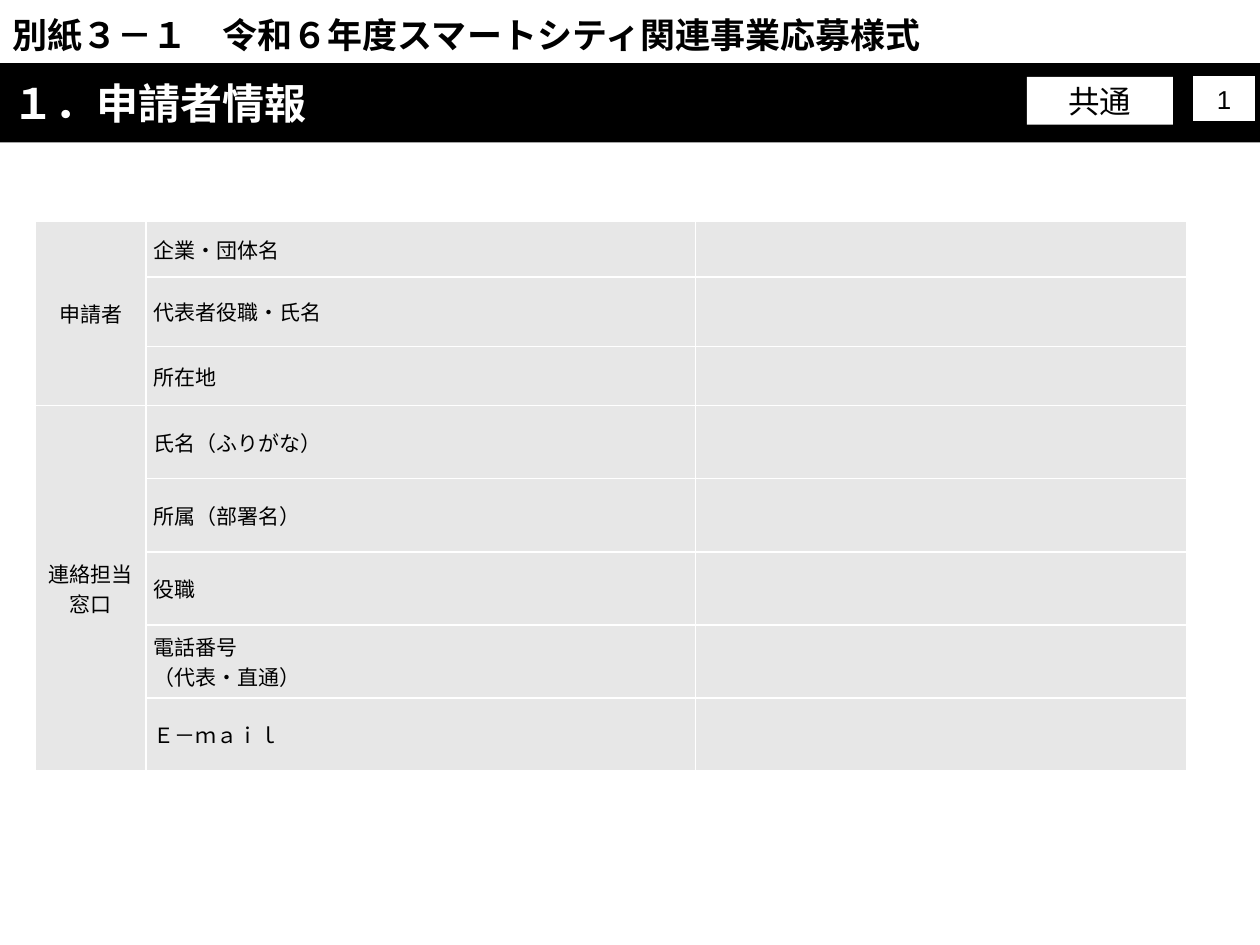
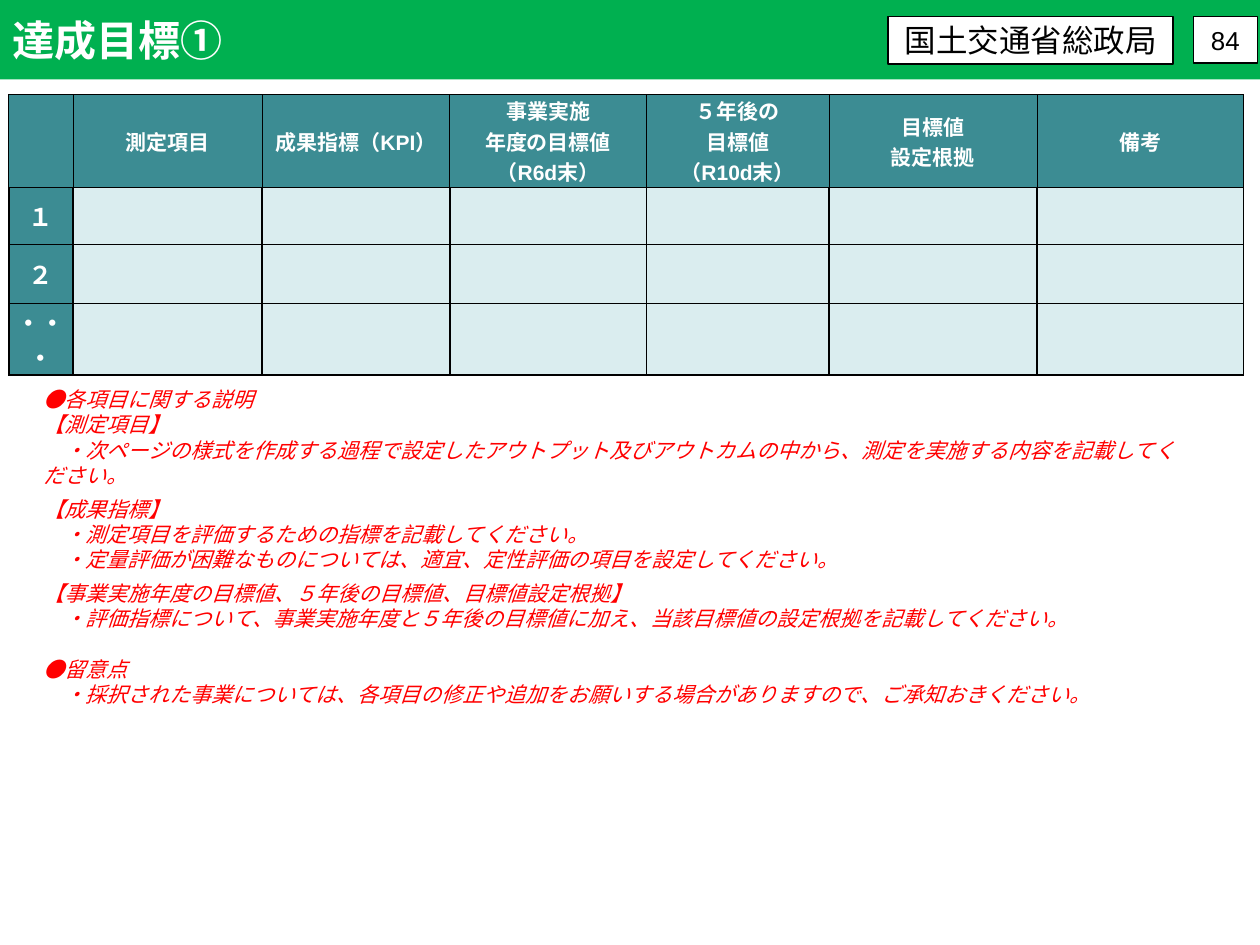
from dataclasses import dataclass

from lxml.etree import SubElement
from pptx import Presentation
from pptx.dml.color import RGBColor
from pptx.enum.shapes import MSO_SHAPE as Preset
from pptx.enum.text import MSO_ANCHOR as Anchor, PP_ALIGN as Align
from pptx.oxml.ns import qn
from pptx.util import Inches, Pt

COLORS = {
    "black": "000000", "white": "FFFFFF", "green": "00B050", "red": "FF0000",
    "grey": "E7E7E7", "teal": "3C8C93", "pale": "DAEDEF",
}
LATIN = "Arial"
JAPANESE = "Noto Sans CJK JP"
SIDES = ("L", "R", "T", "B")


@dataclass(frozen=True)
class Style:
    size: float
    color: str = "black"
    face: str = LATIN
    bold: bool = False
    italic: bool = False
    align: Align = Align.CENTER


@dataclass(frozen=True)
class Badge:
    text: str
    left: float
    top: float
    width: float
    height: float
    size: float
    border: float = 0


@dataclass(frozen=True)
class Note:
    text: str
    face: str = LATIN
    gap: float = 0


@dataclass(frozen=True)
class Grid:
    left: float
    top: float
    columns: tuple[float, ...]
    rows: tuple[float, ...]


TITLE = Style(24, "white", JAPANESE, bold=True, align=Align.LEFT)
FORM_HEADING = Style(20, bold=True, align=Align.LEFT)
GROUP = Style(12, face=JAPANESE)
ITEM = Style(12, face=JAPANESE, align=Align.JUSTIFY)
HEADER = Style(12, "white", bold=True)
HEADER_JAPANESE = Style(12, "white", JAPANESE, bold=True)
ROW_NUMBER = Style(14, "white", bold=True)

APPLICANT_GRID = Grid(0.28, 1.76, (0.88, 4.36, 3.9), (0.44, 0.55, 0.47) + (0.58,) * 5)
APPLICANT_GROUPS = {
    "申請者": ("企業・団体名", "代表者役職・氏名", "所在地"),
    "連絡担当窓口": ("氏名（ふりがな）", "所属（部署名）", "役職",
               "電話番号\n（代表・直通）", "Ｅ－ｍａｉｌ"),
}

GOAL_GRID = Grid(0.07, 0.75, (0.51, 1.5, 1.49, 1.56, 1.45, 1.65, 1.64), (0.74, 0.45, 0.47, 0.47))
GOAL_HEADERS = (
    "", "測定項目", "成果指標（KPI）", "事業実施\n年度の目標値\n（R6d末）",
    "５年後の\n目標値\n（R10d末）", "目標値\n設定根拠", "備考",
)
JAPANESE_HEADER_LINES = ("事業実施", "年度の目標値", "備考")
GOAL_ROWS = ("１", "２", "・・・")

NOTES = (
    Note("●各項目に関する説明"),
    Note("【測定項目】"),
    Note("　・次ページの様式を作成する過程で設定したアウトプット及びアウトカムの中から、"
         "測定を実施する内容を記載してください。"),
    Note("【成果指標】", gap=5),
    Note("　・測定項目を評価するための指標を記載してください。"),
    Note("　・定量評価が困難なものについては、適宜、定性評価の項目を設定してください。"),
    Note("【事業実施年度の目標値、５年後の目標値、目標値設定根拠】", JAPANESE, 5),
    Note("　・評価指標について、事業実施年度と５年後の目標値に加え、"
         "当該目標値の設定根拠を記載してください。", JAPANESE),
    Note("●留意点", JAPANESE, 14.4),
    Note("　・採択された事業については、各項目の修正や追加をお願いする場合がありますので、"
         "ご承知おきください。", JAPANESE),
)


def rgb(name: str) -> RGBColor:
    return RGBColor.from_string(COLORS[name])


def paint(target, color: str) -> None:
    target.fill.solid()
    target.fill.fore_color.rgb = rgb(color)


def place(shape, left: float, top: float, width: float, height: float) -> None:
    shape.left, shape.top = Inches(left), Inches(top)
    shape.width, shape.height = Inches(width), Inches(height)


def format_para(para, style: Style) -> None:
    para.alignment = style.align
    font = para.font
    font.size, font.name = Pt(style.size), style.face
    font.bold, font.italic = style.bold, style.italic
    font.color.rgb = rgb(style.color)
    defaults = para._p.pPr.find(qn("a:defRPr"))
    SubElement(defaults, qn("a:ea")).set("typeface", JAPANESE)


def write(frame, text: str, style: Style) -> None:
    frame.text = text
    for para in frame.paragraphs:
        format_para(para, style)


def add_title(page, text: str, top: float, color: str) -> None:
    title = page.shapes.title
    place(title, 0, top, 10, 0.63)
    paint(title, color)
    title.text_frame.vertical_anchor = Anchor.MIDDLE
    write(title.text_frame, text, TITLE)


def add_text_box(page, left: float, top: float, width: float, height: float):
    box = page.shapes.add_textbox(Inches(left), Inches(top), Inches(width), Inches(height))
    box.text_frame.word_wrap = True
    return box.text_frame


def add_badge(page, badge: Badge) -> None:
    box = page.shapes.add_shape(Preset.RECTANGLE, 0, 0, 0, 0)
    place(box, badge.left, badge.top, badge.width, badge.height)
    box._element.remove(box._element.find(qn("p:style")))
    box.shadow.inherit = False
    paint(box, "white")
    if badge.border:
        box.line.color.rgb = rgb("black")
        box.line.width = Pt(badge.border)
    else:
        box.line.fill.background()
    box.text_frame.vertical_anchor = Anchor.MIDDLE
    write(box.text_frame, badge.text, Style(badge.size))


def add_grid(page, grid: Grid):
    frame = page.shapes.add_table(
        len(grid.rows), len(grid.columns), Inches(grid.left), Inches(grid.top),
        Inches(sum(grid.columns)), Inches(sum(grid.rows)))
    table = frame.table
    table.first_row = table.horz_banding = False
    properties = table._tbl.tblPr
    properties.remove(properties.find(qn("a:tableStyleId")))
    for column, width in zip(table.columns, grid.columns):
        column.width = Inches(width)
    for row, height in zip(table.rows, grid.rows):
        row.height = Inches(height)
    return table


def set_borders(cell, color: str, widths: tuple[float, ...]) -> None:
    properties = cell._tc.get_or_add_tcPr()
    for side, width in zip(SIDES, widths):
        line = SubElement(properties, qn(f"a:ln{side}"))
        line.set("w", str(Pt(width)))
        fill = SubElement(line, qn("a:solidFill"))
        SubElement(fill, qn("a:srgbClr")).set("val", COLORS[color])


def format_cell(cell, fill: str, border: str, margin: float,
                widths: tuple[float, ...] = (1, 1, 1, 1)) -> None:
    set_borders(cell, border, widths)
    paint(cell, fill)
    cell.vertical_anchor = Anchor.MIDDLE
    cell.margin_left = cell.margin_right = Inches(margin)
    cell.margin_top = cell.margin_bottom = 0


def set_vertical(cell) -> None:
    cell._tc.get_or_add_tcPr().set("vert", "eaVert")


def build_applicant_page(deck) -> None:
    page = deck.slides.add_slide(deck.slide_layouts[5])
    add_title(page, "１．申請者情報", 0.5, "black")
    heading = add_text_box(page, 0, 0.05, 7.83, 0.44)
    heading.vertical_anchor = Anchor.MIDDLE
    write(heading, "別紙３－１　令和６年度スマートシティ関連事業応募様式", FORM_HEADING)
    add_badge(page, Badge("共通", 8.15, 0.61, 1.16, 0.38, 18))
    add_badge(page, Badge("1", 9.46, 0.6, 0.51, 0.37, 14.8, 0.75))

    table = add_grid(page, APPLICANT_GRID)
    for cell in table.iter_cells():
        format_cell(cell, "grey", "white", 0.06)
    first = 0
    for group, items in APPLICANT_GROUPS.items():
        group_cell = table.cell(first, 0)
        group_cell.merge(table.cell(first + len(items) - 1, 0))
        set_vertical(group_cell)
        write(group_cell.text_frame, group, GROUP)
        for row, item in enumerate(items, first):
            write(table.cell(row, 1).text_frame, item, ITEM)
        first += len(items)


def add_goal_table(page) -> None:
    table = add_grid(page, GOAL_GRID)
    for column, header in enumerate(GOAL_HEADERS):
        cell = table.cell(0, column)
        format_cell(cell, "teal", "black", 0, (0.5, 0.5, 0.5, 1))
        cell.text_frame.text = header
        for para in cell.text_frame.paragraphs:
            format_para(para, HEADER_JAPANESE if para.text in JAPANESE_HEADER_LINES else HEADER)
    for row, label in enumerate(GOAL_ROWS, 1):
        for column in range(len(GOAL_HEADERS)):
            format_cell(table.cell(row, column), "pale" if column else "teal", "black", 0)
        write(table.cell(row, 0).text_frame, label, ROW_NUMBER)
    set_vertical(table.cell(len(GOAL_ROWS), 0))


def build_goal_page(deck) -> None:
    page = deck.slides.add_slide(deck.slide_layouts[5])
    add_title(page, "達成目標①", 0, "green")
    add_goal_table(page)
    add_badge(page, Badge("国土交通省総政局", 7.05, 0.13, 2.26, 0.38, 18, 1))
    add_badge(page, Badge("84", 9.47, 0.13, 0.51, 0.37, 14.8, 0.75))

    frame = add_text_box(page, 0.25, 3.02, 9.19, 2.46)
    frame.text = "\n".join(note.text for note in NOTES)
    for para, note in zip(frame.paragraphs, NOTES):
        format_para(para, Style(12, "red", note.face, italic=True, align=Align.LEFT))
        para.line_spacing = Pt(14.4)
        para.space_before = Pt(note.gap)


def main() -> None:
    deck = Presentation()
    deck.slide_width, deck.slide_height = Inches(10), Inches(7.5)
    build_applicant_page(deck)
    build_goal_page(deck)
    deck.save("out.pptx")


if __name__ == "__main__":
    main()
